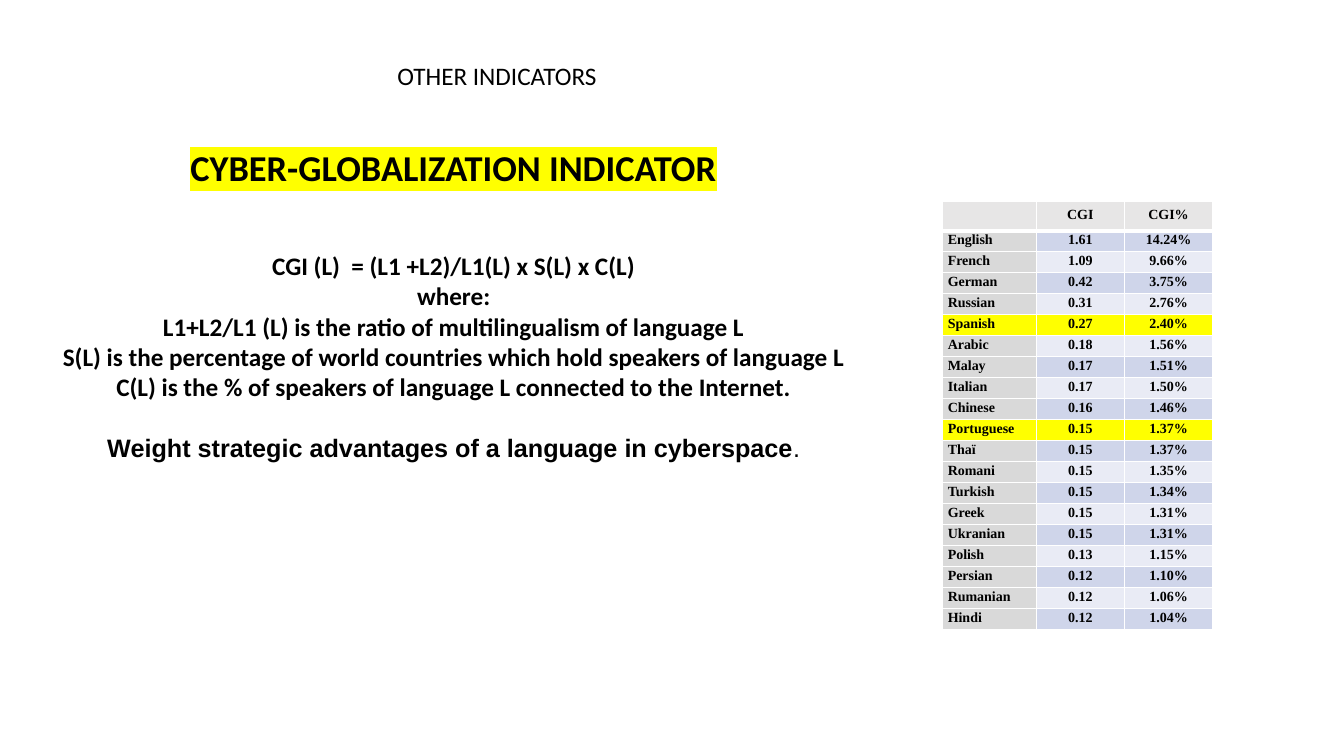
from dataclasses import dataclass

from lxml import etree
from pptx import Presentation
from pptx.dml.color import RGBColor
from pptx.enum.text import MSO_ANCHOR, MSO_AUTO_SIZE, PP_ALIGN
from pptx.oxml.ns import qn
from pptx.util import Inches, Pt

LEFT, CENTER = PP_ALIGN.LEFT, PP_ALIGN.CENTER
TOP, MIDDLE = MSO_ANCHOR.TOP, MSO_ANCHOR.MIDDLE
NO_AUTOFIT = MSO_AUTO_SIZE.NONE


@dataclass(frozen=True)
class Theme:
    text: str = "000000"
    highlight: str = "FFFF00"
    border: str = "FFFFFF"
    header: str = "E7E6E6"
    language: str = "D9D9D9"
    bands: tuple = ("E9EBF5", "CFD5EA")
    body_font: str = "Calibri"
    claim_font: str = "Arial"
    table_font: str = "Times New Roman"
    heading_size: int = 26
    body_size: int = 18
    table_size: int = 10
    table_leading: float = 8.7


THEME = Theme()
TITLE_BOX = (3.84, 0.55, 2.2, 0.4)
FORMULA_BOX = (0.21, 1.39, 8.58, 3.57)
TABLE_BOX = (9.35, 2, 2.68, 4.17)

HEADING = "CYBER-GLOBALIZATION INDICATOR"
FORMULA_LINES = [
    "CGI (L)  = (L1 +L2)/L1(L) x S(L) x C(L)",
    "where:",
    "L1+L2/L1 (L) is the ratio of multilingualism of language L",
    "S(L) is the percentage of world countries which hold speakers of language L",
    "C(L) is the % of speakers of language L connected to the Internet.",
]
CLAIM = "Weight strategic advantages of a language in cyberspace"

COLUMN_WIDTHS = (0.93, 0.87, 0.88)
HIGHLIGHTED = {"Spanish", "Portuguese"}
ROWS = [
    ("", "CGI", "CGI%"),
    ("English", "1.61", "14.24%"),
    ("French", "1.09", "9.66%"),
    ("German", "0.42", "3.75%"),
    ("Russian", "0.31", "2.76%"),
    ("Spanish", "0.27", "2.40%"),
    ("Arabic", "0.18", "1.56%"),
    ("Malay", "0.17", "1.51%"),
    ("Italian", "0.17", "1.50%"),
    ("Chinese", "0.16", "1.46%"),
    ("Portuguese", "0.15", "1.37%"),
    ("Thaï", "0.15", "1.37%"),
    ("Romani", "0.15", "1.35%"),
    ("Turkish", "0.15", "1.34%"),
    ("Greek", "0.15", "1.31%"),
    ("Ukranian", "0.15", "1.31%"),
    ("Polish", "0.13", "1.15%"),
    ("Persian", "0.12", "1.10%"),
    ("Rumanian", "0.12", "1.06%"),
    ("Hindi", "0.12", "1.04%"),
]


def apply_format(target, values):
    for name, value in values.items():
        setattr(target, name, value)


def place(shape, box):
    names = ("left", "top", "width", "height")
    apply_format(shape, dict(zip(names, map(Inches, box))))


def add_run(paragraph, text, font, size, bold=True):
    run = paragraph.add_run()
    run.text = text
    apply_format(run.font, {"name": font, "size": Pt(size), "bold": bold})
    run.font.color.rgb = RGBColor.from_string(THEME.text)
    return run


def highlight(run, color):
    mark = etree.Element(qn("a:highlight"))
    etree.SubElement(mark, qn("a:srgbClr"), val=color)
    run.font.fill._xPr.find(qn("a:solidFill")).addnext(mark)


def set_border(cell, side, width):
    properties = cell._tc.get_or_add_tcPr()
    line = etree.SubElement(properties, qn(f"a:ln{side}"), w=str(Pt(width)))
    fill = etree.SubElement(line, qn("a:solidFill"))
    etree.SubElement(fill, qn("a:srgbClr"), val=THEME.border)


def build_title(title, box):
    place(title, box)
    frame = title.text_frame
    apply_format(frame, {"auto_size": NO_AUTOFIT, "word_wrap": False, "vertical_anchor": TOP})
    paragraph = frame.paragraphs[0]
    paragraph.alignment = LEFT
    add_run(paragraph, "OTHER INDICATORS", THEME.body_font, THEME.body_size, bold=False)


def add_body_paragraph(frame, is_first=False, space_before=0):
    paragraph = frame.paragraphs[0] if is_first else frame.add_paragraph()
    apply_format(paragraph, {"alignment": CENTER, "space_before": Pt(space_before)})
    properties = paragraph._p.get_or_add_pPr()
    properties.set("marL", "0")
    properties.set("indent", "0")
    etree.SubElement(properties, qn("a:buNone"))
    return paragraph


def build_formula(body, box):
    place(body, box)
    frame = body.text_frame
    apply_format(frame, {"auto_size": NO_AUTOFIT, "word_wrap": True, "vertical_anchor": TOP})
    heading = add_body_paragraph(frame, is_first=True)
    run = add_run(heading, HEADING, THEME.body_font, THEME.heading_size)
    highlight(run, THEME.highlight)
    for index, line in enumerate(FORMULA_LINES):
        paragraph = add_body_paragraph(frame, space_before=0 if index else 44)
        add_run(paragraph, line, THEME.body_font, THEME.body_size)
    claim = add_body_paragraph(frame, space_before=22)
    add_run(claim, CLAIM, THEME.claim_font, THEME.body_size)
    add_run(claim, ".", THEME.claim_font, THEME.body_size, bold=False)


def cell_color(row, column):
    if row == 0:
        return THEME.header
    if ROWS[row][0] in HIGHLIGHTED:
        return THEME.highlight
    return THEME.bands[row % 2] if column else THEME.language


def fill_cell(cell, row, column):
    apply_format(cell, {
        "vertical_anchor": MIDDLE,
        "margin_left": Inches(0.05),
        "margin_right": Inches(0.05),
        "margin_top": Inches(0.01),
        "margin_bottom": 0,
    })
    thick_side = {0: "B", 1: "T"}.get(row)
    for side in "LRTB":
        set_border(cell, side, 3 if side == thick_side else 1)
    cell.fill.solid()
    cell.fill.fore_color.rgb = RGBColor.from_string(cell_color(row, column))
    paragraph = cell.text_frame.paragraphs[0]
    apply_format(paragraph, {
        "alignment": CENTER if column else LEFT,
        "line_spacing": Pt(THEME.table_leading),
    })
    add_run(paragraph, ROWS[row][column], THEME.table_font, THEME.table_size)


def build_table(slide, box):
    frame = slide.shapes.add_table(len(ROWS), len(COLUMN_WIDTHS), *map(Inches, box))
    table = frame.table
    for column, width in zip(table.columns, COLUMN_WIDTHS):
        column.width = Inches(width)
    for row_index, row in enumerate(table.rows):
        row.height = Inches(box[3] / len(ROWS))
        for column_index, cell in enumerate(row.cells):
            fill_cell(cell, row_index, column_index)


def main():
    presentation = Presentation()
    presentation.slide_width = Inches(13.33)
    presentation.slide_height = Inches(7.5)
    slide = presentation.slides.add_slide(presentation.slide_layouts[1])
    build_title(slide.shapes.title, TITLE_BOX)
    build_formula(slide.placeholders[1], FORMULA_BOX)
    build_table(slide, TABLE_BOX)
    presentation.save("out.pptx")


if __name__ == "__main__":
    main()
